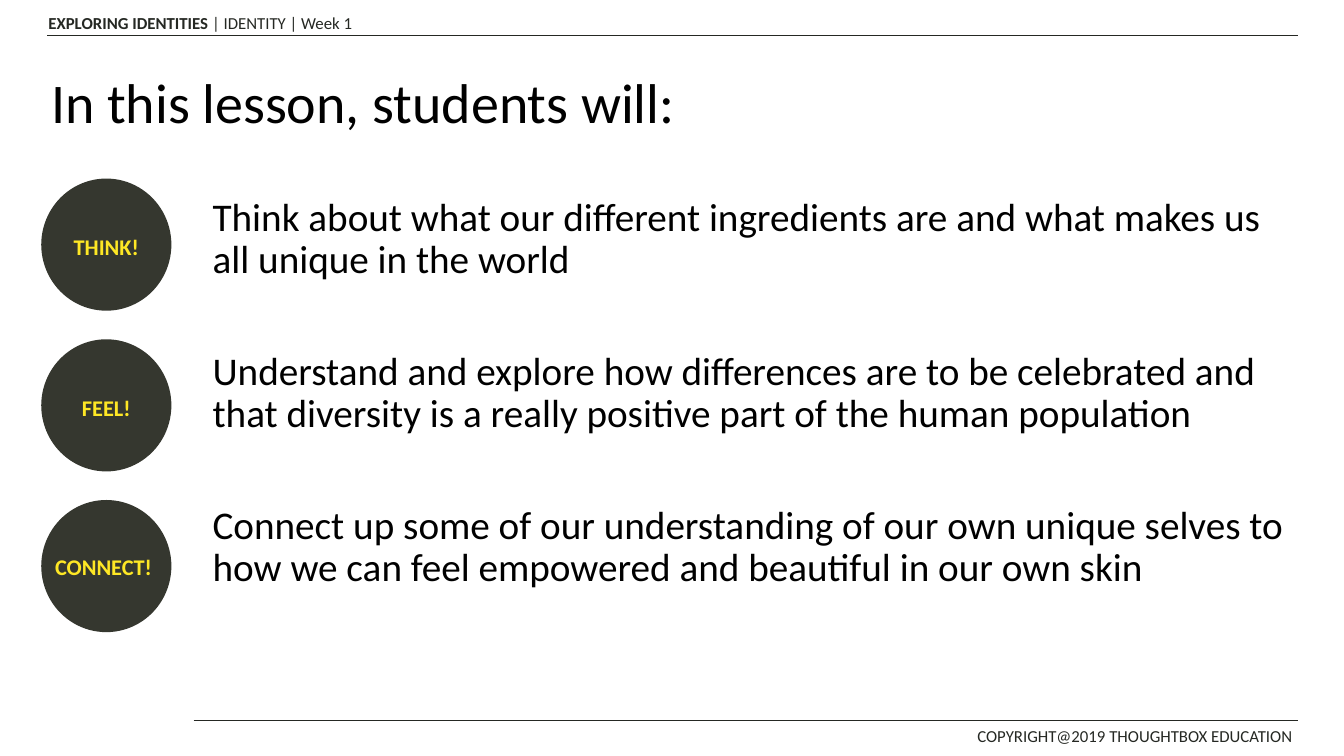
"""Build the lesson aims slide with three labelled circles."""
from lxml.etree import SubElement
from pptx import Presentation
from pptx.dml.color import RGBColor
from pptx.enum.shapes import MSO_CONNECTOR, MSO_SHAPE
from pptx.enum.text import MSO_ANCHOR, PP_ALIGN
from pptx.oxml.ns import qn
from pptx.util import Cm, Pt

HEADER = [("EXPLORING IDENTITIES ", True), ("| IDENTITY | Week 1", False)]
FOOTER = "COPYRIGHT@2019 THOUGHTBOX EDUCATION"
TITLE = "In this lesson, students will:"
AIMS = [
    "Think about what our different ingredients are and what makes us all unique in the world",
    "Understand and explore how differences are to be celebrated and that diversity is a really "
    "positive part of the human population",
    "Connect up some of our understanding of our own unique selves to how we can feel empowered "
    "and beautiful in our own skin",
]
CIRCLE_LABELS = ["THINK!", "FEEL!", ""]
WIDE_LABEL = "CONNECT!"
RULES = [(1.19, 0.89), (4.88, 18.16)]

FONT = "Calibri"
BLACK = RGBColor(0x00, 0x00, 0x00)
INK = RGBColor(0x25, 0x28, 0x23)
CIRCLE_FILL = RGBColor(0x35, 0x37, 0x2F)
YELLOW = RGBColor(0xFE, 0xE7, 0x25)

RULE_RIGHT = 32.72
CIRCLE_LEFT, CIRCLE_TOP = 1.04, 4.5
CIRCLE_WIDTH, CIRCLE_HEIGHT, CIRCLE_PITCH = 3.28, 3.33, 4.05


def write(frame, paragraphs, size, color, bold=False, align=PP_ALIGN.LEFT,
          anchor=MSO_ANCHOR.TOP, wrap=True, line_spacing=1.0, gap=0, after=0):
    """Fill a text frame; a paragraph is a string or a list of (text, bold) runs."""
    frame.word_wrap = wrap
    frame.vertical_anchor = anchor
    for index, content in enumerate(paragraphs):
        paragraph = frame.add_paragraph() if index else frame.paragraphs[0]
        paragraph.alignment = align
        paragraph.line_spacing = line_spacing
        paragraph.space_before = Pt(gap if index else 0)
        paragraph.space_after = Pt(after)
        runs = [(content, bold)] if isinstance(content, str) else content
        for text, run_bold in runs:
            run = paragraph.add_run()
            run.text = text
            run.font.name = FONT
            run.font.size = Pt(size)
            run.font.bold = run_bold
            run.font.color.rgb = color


def add_text(slide, left, top, width, height, paragraphs, **text_format):
    """Add a text box, with positions in centimetres."""
    box = slide.shapes.add_textbox(Cm(left), Cm(top), Cm(width), Cm(height))
    write(box.text_frame, paragraphs, **text_format)


def add_rule(slide, left, top):
    """Add a thin horizontal line that ends at the right margin."""
    rule = slide.shapes.add_connector(
        MSO_CONNECTOR.STRAIGHT, Cm(left), Cm(top), Cm(RULE_RIGHT), Cm(top))
    rule.line.color.rgb = INK
    rule.line.width = Pt(1)
    SubElement(rule._element.spPr, qn("a:effectLst"))


def add_circle(slide, row, label):
    """Add the dark circle of one row."""
    circle = slide.shapes.add_shape(
        MSO_SHAPE.OVAL, Cm(CIRCLE_LEFT), Cm(CIRCLE_TOP + row * CIRCLE_PITCH),
        Cm(CIRCLE_WIDTH), Cm(CIRCLE_HEIGHT))
    circle.shadow.inherit = False
    circle.fill.solid()
    circle.fill.fore_color.rgb = CIRCLE_FILL
    circle.line.fill.background()
    if label:
        write(circle.text_frame, [label], size=16, color=YELLOW, bold=True,
              align=PP_ALIGN.CENTER, anchor=MSO_ANCHOR.MIDDLE, line_spacing=1.15, after=10)


def main():
    presentation = Presentation()
    presentation.slide_width, presentation.slide_height = Cm(33.87), Cm(19.05)
    slide = presentation.slides.add_slide(presentation.slide_layouts[6])

    add_text(slide, 0.97, 0.2, 8.23, 0.76, [HEADER], size=12, color=INK, wrap=False)
    add_text(slide, 24.38, 18.16, 8.64, 0.79, [FOOTER], size=12, color=INK)
    for left, top in RULES:
        add_rule(slide, left, top)

    add_text(slide, 1.04, 0.81, 29.21, 3.68, [TITLE], size=40, color=BLACK,
             anchor=MSO_ANCHOR.MIDDLE, line_spacing=0.9)
    add_text(slide, 5.11, 4.85, 27.71, 12.09, AIMS, size=28, color=BLACK,
             line_spacing=0.9, gap=49.5)
    for row, label in enumerate(CIRCLE_LABELS):
        add_circle(slide, row, label)
    add_text(slide, 1.14, 13.82, 3.05, 0.94, [WIDE_LABEL], size=16, color=YELLOW, bold=True)

    presentation.save("out.pptx")


if __name__ == "__main__":
    main()
